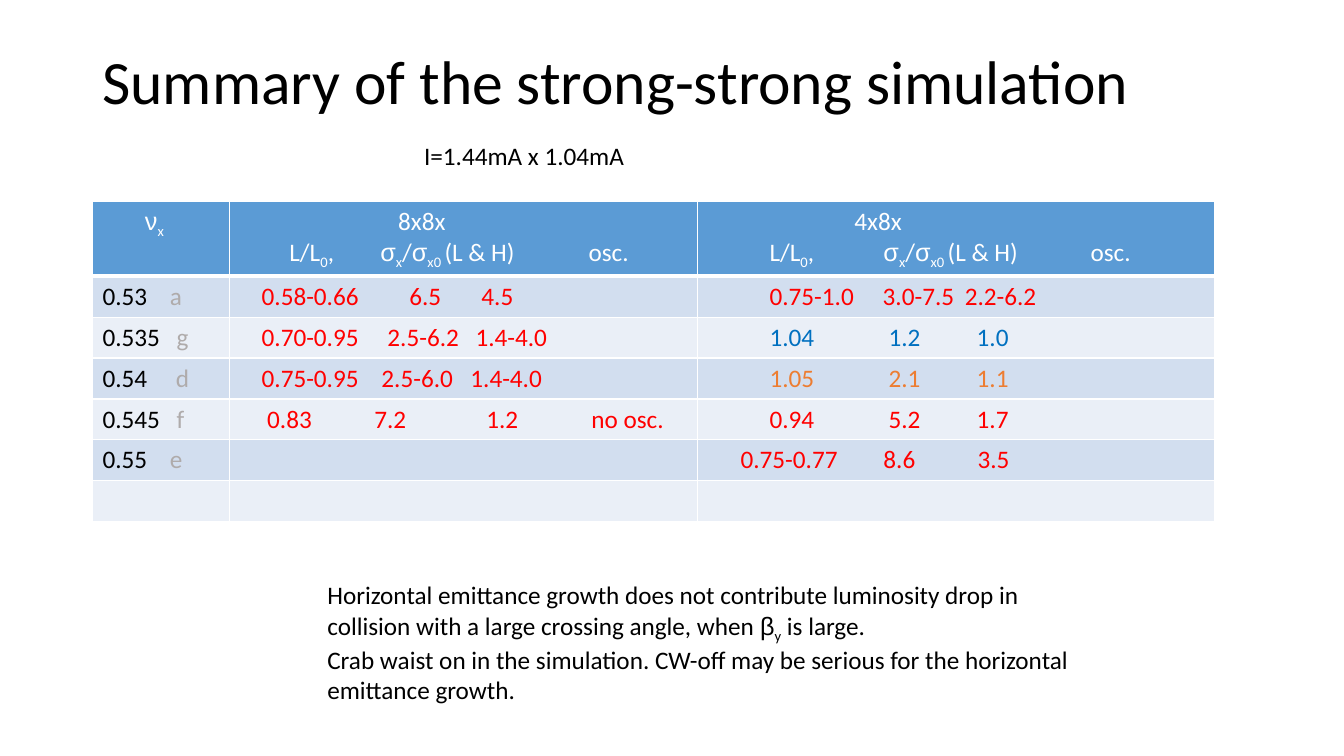
"""Build the summary slide of the strong-strong simulation."""
from dataclasses import dataclass
from itertools import groupby

from lxml import etree
from pptx import Presentation
from pptx.dml.color import RGBColor
from pptx.enum.text import MSO_ANCHOR
from pptx.oxml.ns import qn
from pptx.util import Cm, Pt

MIDDLE = MSO_ANCHOR.MIDDLE
TOP = MSO_ANCHOR.TOP
GREEK = "νσβ"


@dataclass(frozen=True)
class Theme:
    """Colours, fonts and type sizes of the slide."""
    black: str = "000000"
    white: str = "FFFFFF"
    grey: str = "AFABAB"
    red: str = "FF0000"
    blue: str = "0070C0"
    orange: str = "ED7D31"
    header: str = "5B9BD5"
    bands: tuple = ("D2DEEF", "EAEFF7")
    font: str = "Calibri"
    greek_font: str = "Arial"
    title_size: int = 44
    body_size: int = 18


THEME = Theme()


def write(paragraph, text, *, color=THEME.black, size=THEME.body_size, stops=()):
    """Add text with ~subscripts~, Greek letters and tab stops in centimetres."""
    if stops:
        tab_list = etree.SubElement(paragraph._p.get_or_add_pPr(), qn("a:tabLst"))
        for stop in stops:
            etree.SubElement(tab_list, qn("a:tab"), pos=str(int(Cm(stop))), algn="l")
    for index, part in enumerate(text.split("~")):
        for is_greek, letters in groupby(part, lambda letter: letter in GREEK):
            run = paragraph.add_run()
            run.text = "".join(letters)
            run.font.name = THEME.greek_font if is_greek else THEME.font
            run.font.size = Pt(size)
            run.font.bold = False
            run.font.color.rgb = RGBColor.from_string(color)
            if index % 2:
                run._r.get_or_add_rPr().set("baseline", "-25000")


def next_paragraph(frame, index):
    """Return the first paragraph of a frame, or a new one after it."""
    return frame.add_paragraph() if index else frame.paragraphs[0]


class SlideBuilder:
    """Hold the theme and the current slide, and add elements to it."""

    def __init__(self, slide, theme):
        """Keep the slide and its theme."""
        self.slide = slide
        self.theme = theme

    def text(self, box, lines, size, anchor=TOP, spacing=None):
        """Add a wrapped text box with one paragraph per line."""
        frame = self.slide.shapes.add_textbox(*map(Cm, box)).text_frame
        frame.word_wrap = True
        frame.vertical_anchor = anchor
        for index, line in enumerate(lines):
            paragraph = next_paragraph(frame, index)
            paragraph.line_spacing = spacing
            write(paragraph, line, size=size)

    def paint(self, cell, fill, bottom):
        """Give a cell white borders and a solid fill."""
        properties = cell._tc.get_or_add_tcPr()
        for side, width in (("L", 1), ("R", 1), ("T", 1), ("B", bottom)):
            line = etree.SubElement(properties, qn(f"a:ln{side}"), w=str(int(Pt(width))))
            solid = etree.SubElement(line, qn("a:solidFill"))
            etree.SubElement(solid, qn("a:srgbClr"), val=self.theme.white)
        cell.fill.solid()
        cell.fill.fore_color.rgb = RGBColor.from_string(fill)

    def table(self, left, top, widths, heights, header, rows):
        """Add the table of luminosity and beam size results."""
        table = self.slide.shapes.add_table(
            len(heights), len(widths), Cm(left), Cm(top),
            Cm(sum(widths)), Cm(sum(heights))).table
        for column, width in zip(table.columns, widths):
            column.width = Cm(width)
        for index, height in enumerate(heights):
            table.rows[index].height = Cm(height)
            fill = self.theme.bands[(index - 1) % 2] if index else self.theme.header
            for cell in table.rows[index].cells:
                self.paint(cell, fill, 1 if index else 3)
        for column, lines in enumerate(header):
            frame = table.cell(0, column).text_frame
            for index, (line, stops) in enumerate(lines):
                write(next_paragraph(frame, index), line,
                      color=self.theme.white, stops=stops)
        for index, (tune, label, stop, *results) in enumerate(rows, 1):
            paragraph = table.cell(index, 0).text_frame.paragraphs[0]
            write(paragraph, tune, stops=(stop,))
            write(paragraph, "\t" + label, color=self.theme.grey)
            for column, result in enumerate(results, 1):
                if result:
                    values, color, stops = result
                    line = "".join("\t" + value for value in values.split("|"))
                    write(table.cell(index, column).text_frame.paragraphs[0],
                          line, color=color, stops=stops)


QUANTITIES = "\tL/L~0~,\tσ~x~/σ~x0 ~(L & H)\tosc."
HEADER = [
    [("\tν~x~", (1.07,))],
    [("\t8x8x", (4,)), (QUANTITIES, (1.26, 3.55, 8.8))],
    [("\t4x8x", (3.71,)), (QUANTITIES, (1.57, 4.44, 9.66))],
]
RIGHT_STOPS = (1.57, 4.57, 6.79)
ROWS = [
    ("0.53", "a", 1.7, ("0.58-0.66|6.5|4.5", THEME.red, (0.56, 4.28, 6.1)),
     ("0.75-1.0|3.0-7.5|2.2-6.2", THEME.red, (1.57, 4.42, 6.49))),
    ("0.535", "g", 1.87, ("0.70-0.95|2.5-6.2|1.4-4.0", THEME.red, (0.56, 3.73, 5.95)),
     ("1.04|1.2|1.0", THEME.blue, RIGHT_STOPS)),
    ("0.54", "d", 1.85, ("0.75-0.95|2.5-6.0|1.4-4.0", THEME.red, (0.56, 3.58, 5.82)),
     ("1.05|2.1|1.1", THEME.orange, RIGHT_STOPS)),
    ("0.545", "f", 1.87, ("0.83|7.2|1.2|no osc.", THEME.red, (0.7, 3.4, 6.22, 8.87)),
     ("0.94|5.2|1.7", THEME.red, RIGHT_STOPS)),
    ("0.55", "e", 1.7, None,
     ("0.75-0.77|8.6|3.5", THEME.red, (0.84, 4.44, 6.81))),
]
NOTES = [
    "Horizontal emittance growth does not contribute luminosity drop in collision "
    "with a large crossing angle, when β~y~ is large.",
    "Crab waist on in the simulation. CW-off may be serious for the horizontal "
    "emittance growth.",
]


def main():
    """Build and save the presentation."""
    presentation = Presentation()
    presentation.slide_width = Cm(33.87)
    presentation.slide_height = Cm(19.05)
    slide = presentation.slides.add_slide(presentation.slide_layouts[6])
    builder = SlideBuilder(slide, THEME)
    builder.text((2.33, 0.28, 29.21, 3.68), ["Summary of the strong-strong simulation"],
                 THEME.title_size, MIDDLE, 0.9)
    builder.table(2.33, 5.08, (3.45, 11.79, 13.03), [1.65] + [1.03] * 6, HEADER, ROWS)
    builder.text((10.44, 3.4, 9.12, 1.02), ["I=1.44mA x 1.04mA"], THEME.body_size)
    builder.text((8, 14.48, 20.09, 3.32), NOTES, THEME.body_size)
    presentation.save("out.pptx")


if __name__ == "__main__":
    main()
